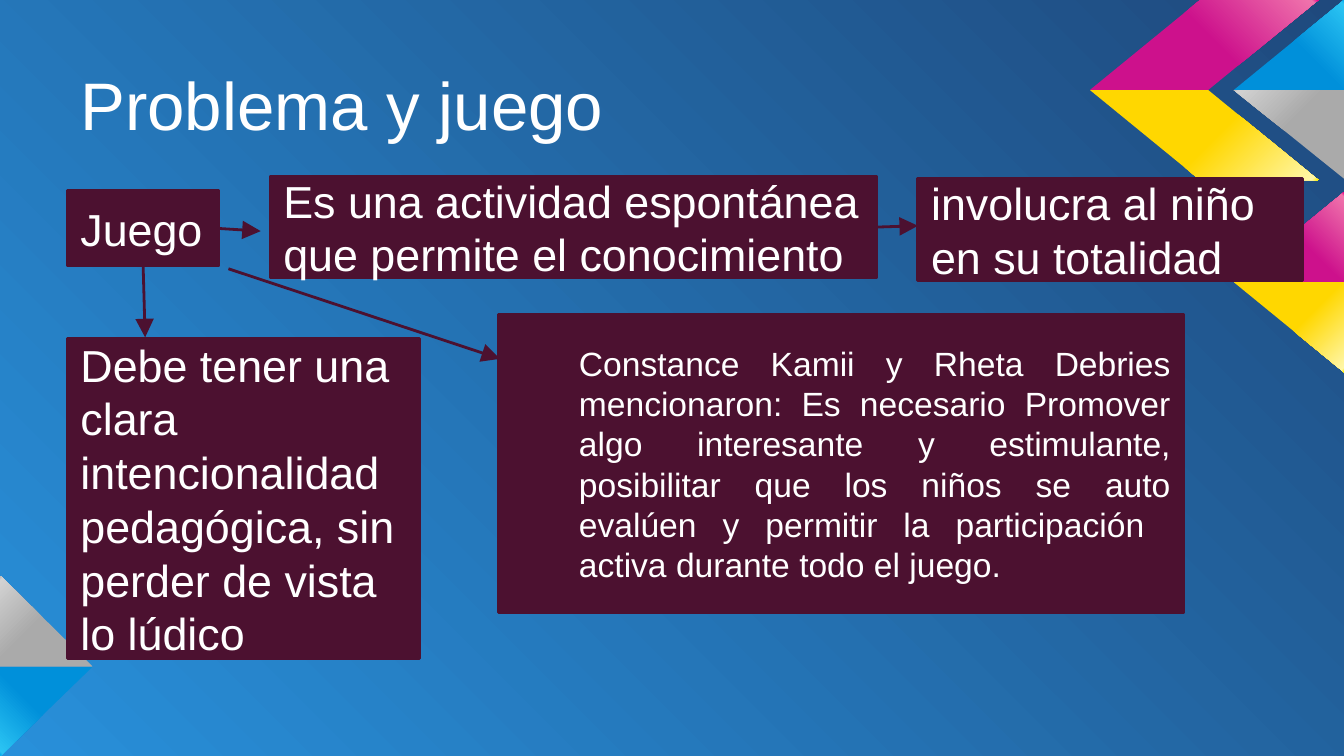
"""Build the slide about problems and play, with linked boxes on a faceted background."""
from dataclasses import dataclass

import lxml.etree
import pptx
import pptx.dml.color
import pptx.enum.shapes
import pptx.enum.text
import pptx.oxml.ns
import pptx.shapes.base
import pptx.slide
import pptx.text.text
import pptx.util
from pptx.util import Inches

FONT = "Arial"
WHITE = "FFFFFF"
PLUM = "4C1130"
LINE_WIDTH = pptx.util.Pt(1.5)
BLUE = ("0090DA", "2BC4F3", "00AEEE")
GREY = ("AAAAAA", "D2D2D2", "B9B9B9")
PINK = ("CD118C", "F074AC", "EB008B")
YELLOW = ("FFD700", "FFF7A9", "FFF100")


@dataclass
class Facet:
    points: list[tuple[float, float]]
    colors: tuple[str, str, str]
    angle: int


@dataclass
class Box:
    name: str
    text: str
    left: float
    top: float
    width: float
    height: float
    size: int = 24
    indent: float = 0
    justified: bool = False


@dataclass
class Arrow:
    start: tuple[float, float]
    end: tuple[float, float]
    source: tuple[str, int] | None = None


FACETS = [
    Facet([(0.69, 4.96), (0, 4.96), (0, 5.62), (0.01, 5.62)], BLUE, 135),
    Facet([(0.69, 4.96), (0.01, 4.29), (0, 4.29), (0, 4.96)], GREY, 225),
    Facet([(10, 0), (9.18, 0.67), (10, 0.67)], BLUE, 315),
    Facet([(9.18, 0.67), (10, 1.33), (10, 0.67)], GREY, 225),
    Facet([(8.99, 0.67), (9.81, 0), (8.93, 0), (8.11, 0.67)], PINK, 315),
    Facet([(10, 1.43), (9.18, 2.1), (10, 2.1)], PINK, 315),
    Facet([(9.18, 2.1), (10, 2.77), (10, 2.1)], YELLOW, 45),
    Facet([(8.99, 0.67), (9.81, 1.34), (8.93, 1.34), (8.11, 0.67)], YELLOW, 45),
]

BOXES = [
    Box("play", "Juego", 0.5, 1.42, 1.13, 0.56),
    Box("activity", "Es una actividad espontánea que permite el conocimiento",
        2.01, 1.31, 4.51, 0.76),
    Box("child", "involucra al niño en su totalidad", 6.83, 1.33, 2.86, 0.76),
    Box("intention", "Debe tener una clara intencionalidad pedagógica, "
        "sin perder de vista lo lúdico", 0.5, 2.52, 2.62, 2.38),
    Box("authors", "Constance Kamii y Rheta Debries mencionaron: Es necesario "
        "Promover algo interesante y estimulante, posibilitar que los niños se auto "
        "evalúen y permitir la participación  activa durante todo el juego.",
        3.71, 2.34, 5.1, 2.22, size=18, indent=0.5, justified=True),
]

ARROWS = [
    Arrow((1.63, 1.7), (1.94, 1.72), source=("play", 3)),
    Arrow((6.52, 1.69), (6.83, 1.68), source=("activity", 3)),
    Arrow((1.07, 1.98), (1.08, 2.51), source=("play", 2)),
    Arrow((1.7, 2), (3.72, 2.67)),
]


def color(value: str) -> pptx.dml.color.RGBColor:
    return pptx.dml.color.RGBColor.from_string(value)


def add_child(parent: lxml.etree._Element, tag: str, **attributes: str) -> lxml.etree._Element:
    return lxml.etree.SubElement(parent, pptx.oxml.ns.qn(tag), attributes)


def set_gradient_stops(owner: lxml.etree._Element,
                       stops: list[tuple[int, str]]) -> lxml.etree._Element:
    gradient = next(owner.iter(pptx.oxml.ns.qn("a:gradFill")))
    for child in list(gradient):
        gradient.remove(child)
    stop_list = add_child(gradient, "a:gsLst")
    for percent, value in stops:
        stop = add_child(stop_list, "a:gs", pos=str(percent * 1000))
        add_child(stop, "a:srgbClr", val=value)
    return gradient


def paint_background(slide: pptx.slide.Slide) -> None:
    slide.background.fill.gradient()
    gradient = set_gradient_stops(slide.element, [(0, "2890DA"), (100, "1F497D")])
    circle = add_child(gradient, "a:path", path="circle")
    add_child(circle, "a:fillToRect", t="100000", r="100000")


def draw_facet(slide: pptx.slide.Slide, facet: Facet) -> None:
    points = [(Inches(x), Inches(y)) for x, y in facet.points]
    builder = slide.shapes.build_freeform(*points[0])
    builder.add_line_segments(points[1:], close=True)
    shape = builder.convert_to_shape()
    shape.shadow.inherit = False
    shape.line.fill.background()
    shape.fill.gradient()
    base, light, edge = facet.colors
    gradient = set_gradient_stops(
        shape.element, [(0, base), (54, base), (98, light), (100, edge)])
    add_child(gradient, "a:lin", ang=str(facet.angle * 60000), scaled="0")


def write_text(frame: pptx.text.text.TextFrame, text: str, *, size: int,
               anchor: pptx.enum.text.MSO_ANCHOR, indent: float = 0,
               justified: bool = False) -> None:
    frame.word_wrap = True
    frame.vertical_anchor = anchor
    frame.margin_left = frame.margin_right = Inches(0.1)
    frame.margin_top = frame.margin_bottom = Inches(0.1)
    paragraph = frame.paragraphs[0]
    alignment = pptx.enum.text.PP_ALIGN
    paragraph.alignment = alignment.JUSTIFY if justified else alignment.LEFT
    if indent:
        properties = paragraph._p.get_or_add_pPr()
        properties.set("marL", str(Inches(indent)))
        properties.set("indent", "0")
    run = paragraph.add_run()
    run.text = text
    run.font.name = FONT
    run.font.size = pptx.util.Pt(size)
    run.font.color.rgb = color(WHITE)


def draw_box(slide: pptx.slide.Slide, box: Box) -> pptx.shapes.base.BaseShape:
    shape = slide.shapes.add_shape(
        pptx.enum.shapes.MSO_SHAPE.RECTANGLE, Inches(box.left), Inches(box.top),
        Inches(box.width), Inches(box.height))
    shape.shadow.inherit = False
    shape.fill.solid()
    shape.fill.fore_color.rgb = color(PLUM)
    shape.line.color.rgb = color(PLUM)
    shape.line.width = LINE_WIDTH
    write_text(shape.text_frame, box.text, size=box.size, indent=box.indent,
               justified=box.justified, anchor=pptx.enum.text.MSO_ANCHOR.MIDDLE)
    return shape


def draw_arrow(slide: pptx.slide.Slide, arrow: Arrow,
               boxes: dict[str, pptx.shapes.base.BaseShape]) -> None:
    connector = slide.shapes.add_connector(
        pptx.enum.shapes.MSO_CONNECTOR.STRAIGHT,
        *(Inches(value) for value in arrow.start + arrow.end))
    if arrow.source:
        name, side = arrow.source
        connector.begin_connect(boxes[name], side)
    connector.line.color.rgb = color(PLUM)
    connector.line.width = LINE_WIDTH
    add_child(connector.line._get_or_add_ln(), "a:tailEnd", type="triangle", w="lg", len="lg")
    add_child(connector.element.spPr, "a:effectLst")


def main() -> None:
    presentation = pptx.Presentation()
    presentation.slide_width = Inches(10)
    presentation.slide_height = Inches(10 * 9 / 16)
    slide = presentation.slides.add_slide(presentation.slide_layouts[6])
    paint_background(slide)
    for facet in FACETS:
        draw_facet(slide, facet)
    title = slide.shapes.add_textbox(Inches(0.5), Inches(0.23), Inches(7.52), Inches(0.94))
    write_text(title.text_frame, "Problema y juego", size=36,
               anchor=pptx.enum.text.MSO_ANCHOR.BOTTOM)
    boxes = {box.name: draw_box(slide, box) for box in BOXES}
    for arrow in ARROWS:
        draw_arrow(slide, arrow, boxes)
    presentation.save("out.pptx")


if __name__ == "__main__":
    main()
